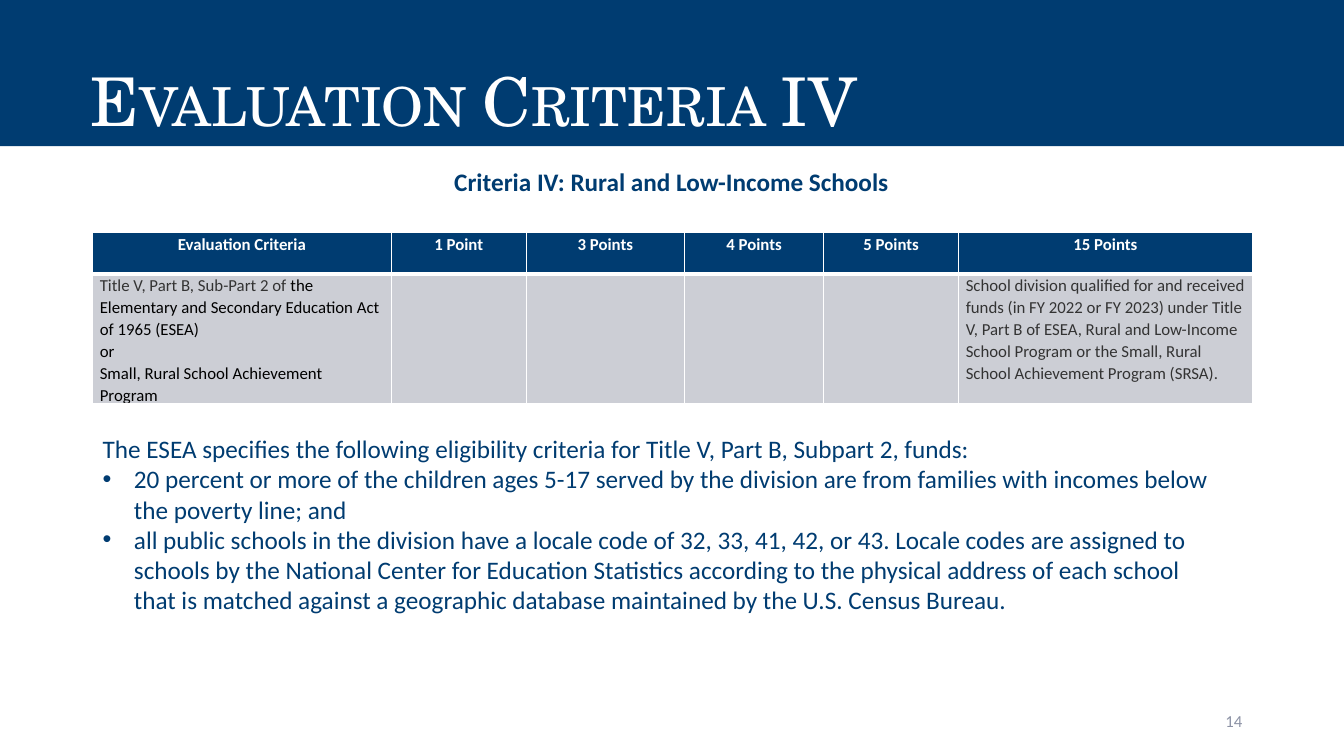
from lxml.etree import SubElement
from pptx import Presentation
from pptx.dml.color import RGBColor
from pptx.enum.shapes import MSO_SHAPE as Shape
from pptx.enum.text import MSO_ANCHOR as Anchor, PP_ALIGN as Align
from pptx.oxml import parse_xml
from pptx.oxml.ns import nsdecls, qn
from pptx.util import Inches, Pt

COLORS = {"navy": "003C71", "white": "FFFFFF", "gray": "CCCED5",
          "dark": "333333", "black": "000000", "muted": "8C92A5"}
SANS, SERIF = "Calibri", "TeX Gyre Schola"

TITLE = "Evaluation Criteria IV"
SUBTITLE = "Criteria IV: Rural and Low-Income Schools"
PAGE = "14"
HEADS = ["Evaluation Criteria", "1 Point", "3 Points", "4 Points",
         "5 Points", "15 Points"]
WIDTHS = [2.96, 1.34, 1.57, 1.38, 1.34, 2.91]
HEIGHTS = [0.41, 1.27]
# Each body cell is a list of paragraphs, each a list of (text, color) runs.
BODY = {
    0: [[("Title V, Part B, Sub-Part 2 of ", "dark"),
         ("the Elementary and Secondary Education Act of 1965 (ESEA)", "black")],
        [("or", "black")],
        [("Small, Rural School Achievement Program", "black")]],
    5: [[("School division qualified for and received funds (in FY 2022 or "
          "FY 2023) under Title V, Part B of ESEA, Rural and Low-Income School "
          "Program or the Small, Rural School Achievement Program (SRSA).",
          "dark")]],
}
INTRO = ("The ESEA specifies the following eligibility criteria for Title V, "
         "Part B, Subpart 2, funds:")
BULLETS = [
    "20 percent or more of the children ages 5-17 served by the division are "
    "from families with incomes below the poverty line; and",
    "all public schools in the division have a locale code of 32, 33, 41, 42, "
    "or 43. Locale codes are assigned to schools by the National Center for "
    "Education Statistics according to the physical address of each school "
    "that is matched against a geographic database maintained by the U.S. "
    "Census Bureau.",
]


def rgb(name):
    return RGBColor.from_string(COLORS[name])


def paint(part, name):
    part.fill.solid()
    part.fill.fore_color.rgb = rgb(name)


def add_run(para, text, size, color, bold=False, font=SANS):
    run = para.add_run()
    run.text = text
    run.font.size, run.font.name, run.font.bold = Pt(size), font, bold
    run.font.color.rgb = rgb(color)
    return run


def fill_text(frame, paras, size, align=Align.LEFT, bold=False, gap=None):
    """Write paragraphs, each given as a list of (text, color) runs."""
    for i, runs in enumerate(paras):
        para = frame.add_paragraph() if i else frame.paragraphs[0]
        para.alignment = align
        if gap:
            para.line_spacing = gap
        for text, color in runs:
            add_run(para, text, size, color, bold)


def add_box(slide, at, paras, size, align=Align.LEFT, bold=False):
    frame = slide.shapes.add_textbox(*map(Inches, at)).text_frame
    frame.word_wrap = True
    fill_text(frame, paras, size, align, bold)
    return frame


def add_bullet(para):
    props = para._p.get_or_add_pPr()
    props.set("marL", str(Inches(0.31)))
    props.set("indent", str(-Inches(0.31)))
    SubElement(props, qn("a:buFont")).set("typeface", "Arial")
    SubElement(props, qn("a:buChar")).set("char", "•")


def add_borders(cell, top, bottom):
    """Draw white cell edges; top and bottom are widths in points."""
    props = cell._tc.get_or_add_tcPr()
    for i, (side, width) in enumerate(
            [("L", 1), ("R", 1), ("T", top), ("B", bottom)]):
        props.insert(i, parse_xml(
            f'<a:ln{side} {nsdecls("a")} w="{Pt(width)}"><a:solidFill>'
            f'<a:srgbClr val="{COLORS["white"]}"/></a:solidFill></a:ln{side}>'))


def add_banner(slide):
    band = slide.shapes.add_shape(Shape.RECTANGLE, 0, 0, Inches(13.33),
                                  Inches(1.45))
    band.shadow.inherit = False
    paint(band, "navy")
    band.line.fill.background()
    frame = band.text_frame
    frame.word_wrap = True
    frame.vertical_anchor = Anchor.BOTTOM
    frame.margin_left = Inches(0.9)
    para = frame.paragraphs[0]
    para.alignment, para.line_spacing = Align.LEFT, 0.9
    run = add_run(para, TITLE, 48, "white", font=SERIF)
    run.font._element.set("cap", "small")


def add_grid(slide):
    grid = slide.shapes.add_table(
        2, len(HEADS), Inches(0.92), Inches(2.31),
        Inches(sum(WIDTHS)), Inches(sum(HEIGHTS))).table
    for row, height in zip(grid.rows, HEIGHTS):
        row.height = Inches(height)
    for c, (head, width) in enumerate(zip(HEADS, WIDTHS)):
        grid.columns[c].width = Inches(width)
        top, low = grid.cell(0, c), grid.cell(1, c)
        for cell, color, edges in ((top, "navy", (1, 3)), (low, "gray", (3, 1))):
            cell.margin_left = cell.margin_right = Inches(0.07)
            cell.margin_top = cell.margin_bottom = 0
            paint(cell, color)
            add_borders(cell, *edges)
        fill_text(top.text_frame, [[(head, "white")]], 12, Align.CENTER, True, 1.07)
        fill_text(low.text_frame, BODY.get(c, []), 12, gap=1.07)


def main():
    deck = Presentation()
    deck.slide_width, deck.slide_height = Inches(13.33), Inches(7.5)
    slide = deck.slides.add_slide(deck.slide_layouts[6])
    add_banner(slide)
    page = add_box(slide, (9.42, 6.95, 3, 0.4), [[(PAGE, "muted")]], 12,
                   Align.RIGHT)
    page.vertical_anchor = Anchor.MIDDLE
    add_grid(slide)
    notes = add_box(slide, (0.92, 4.25, 11.19, 1.92),
                    [[(text, "navy")] for text in [INTRO, *BULLETS]], 18)
    for para in notes.paragraphs[1:]:
        add_bullet(para)
    add_box(slide, (3.33, 1.6, 6.66, 0.4), [[(SUBTITLE, "navy")]], 18,
            Align.CENTER, True)
    deck.save("out.pptx")


if __name__ == "__main__":
    main()
